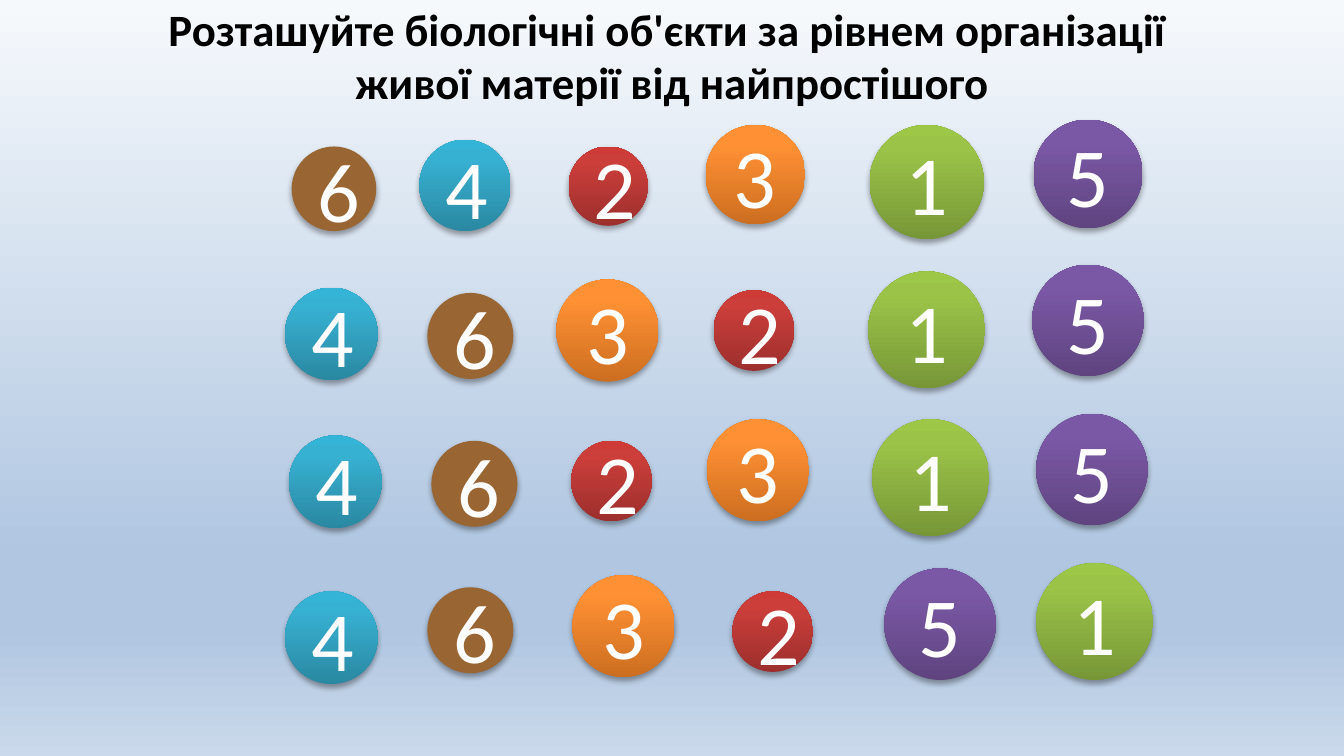
from lxml import etree
from pptx import Presentation
from pptx import util as u
from pptx.dml import color
from pptx.enum import shapes, text
from pptx.oxml import ns

SCALE = 9144
BACKGROUND = [(0, "F6F9FC"), (74, "B0C6E1"), (83, "B0C6E1"), (100, "CAD9EB")]
DIAMETERS = {1: 87, 2: 60, 3: 76, 4: 69, 5: 83, 6: 64}
FILLS = {
    1: [(0, "779737"), (80, "9BC348"), (100, "9DC746")],
    2: [(0, "9C2F2D"), (80, "CB3E3A"), (100, "CE3B37")],
    3: [(0, "CC6E20"), (80, "FF9034"), (100, "FF9136")],
    4: [(0, "2A88A2"), (80, "37B1D2"), (100, "34B4D6")],
    5: [(0, "5F4480"), (80, "7B58A6"), (100, "7C57A8")],
    6: [(0, "996633")],
}
ROWS = [
    (89, 0.98, [(6, 5, 20), (4, 100, 15), (2, 211, 20), (3, 313, 4), (1, 435, 4), (5, 557, 0)]),
    (197, 1, [(4, 0, 17), (6, 106, 21), (3, 202, 11), (2, 319, 19), (1, 434, 5), (5, 556, 0)]),
    (308, 1, [(4, 3, 16), (6, 109, 20), (2, 213, 20), (3, 314, 4), (1, 437, 4), (5, 559, 0)]),
    (419, 1, [(4, 0, 21), (6, 106, 18), (3, 214, 9), (2, 333, 21), (5, 446, 4), (1, 559, 0)]),
]


def px(length):
    return u.Emu(round(length * SCALE))


def rgb(code):
    return color.RGBColor.from_string(code)


def add_node(parent, tag, **attributes):
    node = etree.SubElement(parent, ns.qn(tag))
    for name, value in attributes.items():
        node.set(name, str(value))
    return node


def paint(fill, element, stops, angle):
    if len(stops) == 1:
        fill.solid()
        fill.fore_color.rgb = rgb(stops[0][1])
        return
    fill.gradient()
    fill.gradient_angle = angle
    stop_list = element.find(".//" + ns.qn("a:gsLst"))
    for stop in list(stop_list):
        stop_list.remove(stop)
    for position, code in stops:
        stop = add_node(stop_list, "a:gs", pos=position * 1000)
        add_node(stop, "a:srgbClr", val=str(rgb(code)))


def add_shadow(shape):
    shape.shadow.inherit = False
    effects = shape.element.spPr.find(ns.qn("a:effectLst"))
    shadow = add_node(effects, "a:outerShdw", blurRad=u.Pt(3.1), dist=u.Pt(1.8),
                      dir=5400000, rotWithShape=0)
    tint = add_node(shadow, "a:srgbClr", val="000000")
    add_node(tint, "a:alpha", val=35000)


def write(shape, lines, size, code, bold=False):
    frame = shape.text_frame
    frame.word_wrap = True
    frame.vertical_anchor = text.MSO_ANCHOR.MIDDLE
    for index, line in enumerate(lines):
        para = frame.add_paragraph() if index else frame.paragraphs[0]
        para.alignment = text.PP_ALIGN.CENTER
        span = para.add_run()
        span.text = line
        span.font.name = "Calibri"
        span.font.size = u.Pt(size)
        span.font.bold = bold
        span.font.color.rgb = rgb(code)


def add_title(page, left, top, width, height):
    box = page.shapes.add_textbox(px(left), px(top), px(width), px(height))
    lines = ["Розташуйте біологічні об'єкти за рівнем організації ",
             "живої матерії від найпростішого"]
    write(box, lines, size=24, code="000000", bold=True)


def add_circle_row(page, left, top, zoom, circles):
    for number, across, down in circles:
        diameter = px(round(DIAMETERS[number] * zoom))
        circle = page.shapes.add_shape(shapes.MSO_SHAPE.OVAL, px(left + across),
                                       px(top + down), diameter, diameter)
        paint(circle.fill, circle.element, FILLS[number], 90)
        circle.line.fill.background()
        add_shadow(circle)
        write(circle, [str(number)], size=45, code="FFFFFF")


def main():
    deck = Presentation()
    deck.slide_width = px(1000)
    deck.slide_height = px(1000 * 9 / 16)
    page = deck.slides.add_slide(deck.slide_layouts[6])
    paint(page.background.fill, page.element, BACKGROUND, 270)
    add_title(page, 17, 10, 966, 62)
    for top, zoom, circles in ROWS:
        add_circle_row(page, 212, top, zoom, circles)
    deck.save("out.pptx")


if __name__ == "__main__":
    main()
